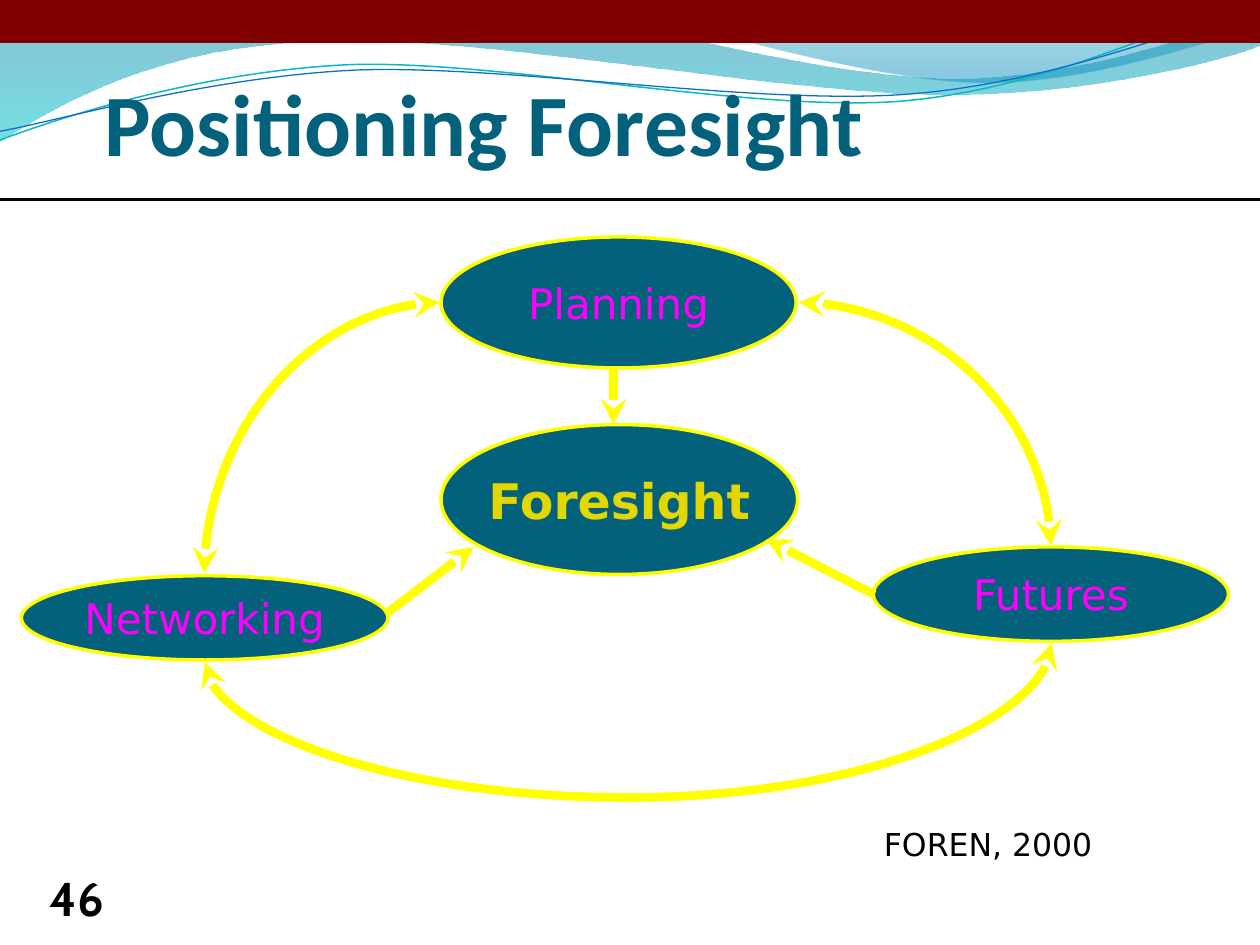
from pptx import Presentation
from pptx import util as u
from pptx.dml.color import RGBColor
from pptx.enum import shapes, text
from pptx.oxml.ns import qn
from lxml import etree

Pt = u.Pt
COLORS = {
    "teal": "04617B", "yellow": "FFFF00", "gold": "E2D700", "magenta": "FF00FF",
    "black": "000000", "maroon": "800000", "aqua": "0AB8BF", "blue": "0F6FC6",
    "ocean": "0074A1", "cyan": "00C6CF", "lagoon": "00A1A9", "sky": "008BBF",
}
WAVES = [
    {"start": (0, 0), "stops": [("ocean", 0, 45), ("cyan", 1, 55)], "segments": [
        [(317, 0)],
        [(343, 12), (478, 45), (546, 45)],
        [(614, 45), (690, 19), (720, 6)],
        [(720, 26)],
        [(708, 32), (626, 55), (537, 54)],
        [(447, 54), (275, 20), (185, 24)],
        [(93, 25), (33, 60), (0, 81)]]},
    {"start": (345, 0), "stops": [("lagoon", 0, 30), ("sky", 0.8, 45)], "segments": [
        [(366, 8), (491, 45), (554, 47)],
        [(616, 50), (692, 23), (720, 15)],
        [(720, 0)]]},
    {"start": (0, 80), "line": ("aqua", 0.85), "segments": [
        [(35, 67), (114, 41), (199, 37)],
        [(284, 34), (427, 64), (513, 58)],
        [(600, 51), (675, 11), (719, -1)]]},
    {"start": (0, 75), "line": ("blue", 0.75), "segments": [
        [(34, 69), (118, 44), (204, 40)],
        [(290, 37), (430, 60), (516, 54)],
        [(602, 48), (678, 15), (720, 4)]]},
]
TOPIC = {"size": 24, "color": "magenta"}
OVALS = [
    ("Planning", (252, 135.4, 203, 74.9), TOPIC),
    ("Futures", (499, 312.5, 203, 54), TOPIC),
    ("Networking", (12.2, 329, 209.5, 48.2), TOPIC),
    ("Foresight", (252, 242.6, 203.8, 85.7), {"size": 28, "color": "gold", "bold": True}),
]
CURVES = [
    {"start": (106.6, 182.9), "end": (261.4, 317.5), "turn": 270, "preset": "curvedConnector2"},
    {"start": (456.5, 172.8), "end": (600.5, 311.8), "turn": 0, "preset": "curvedConnector2"},
    {"start": (364.3, 614.9), "end": (353.5, 131), "turn": 90, "preset": "curvedConnector3",
     "bend": -716700},
]
ARROWS = [
    ((350.6, 210.2), (350.6, 242.6)),
    ((221.8, 349.9), (270.7, 312.5)),
    ((499.7, 339.8), (437.8, 308.2)),
]
RULES = [(113.8, "black", 1.75), (12.2, "maroon", 25)]


def rgb(name):
    return RGBColor.from_string(COLORS[name])


def write(shape, words, size=18, font="DejaVu Sans", color="black", bold=False,
          align="CENTER", anchor="MIDDLE", insets=(7.2, 3.6, 7.2, 3.6), wrap=False):
    frame = shape.text_frame
    frame.word_wrap = wrap
    frame.auto_size = text.MSO_AUTO_SIZE.NONE
    frame.vertical_anchor = getattr(text.MSO_ANCHOR, anchor)
    (frame.margin_left, frame.margin_top,
     frame.margin_right, frame.margin_bottom) = map(Pt, insets)
    paragraph = frame.paragraphs[0]
    paragraph.alignment = getattr(text.PP_ALIGN, align)
    run = paragraph.add_run()
    run.text = words
    run.font.size, run.font.name, run.font.bold = Pt(size), font, bold
    run.font.color.rgb = rgb(color)


def stroke(shape, color, width):
    shape.line.color.rgb = rgb(color)
    shape.line.width = Pt(width)


def add_wave(slide, start, segments, stops=None, line=None):
    points = [(Pt(x), Pt(y)) for segment in segments for x, y in segment]
    builder = slide.shapes.build_freeform(*map(Pt, start))
    builder.add_line_segments(points, close=stops is not None)
    wave = builder.convert_to_shape()
    wave.shadow.inherit = False
    steps = iter(list(wave._element.iter(qn("a:lnTo"))))
    for segment in segments:
        pieces = [next(steps) for _ in segment]
        if len(pieces) == 3:
            curve = etree.Element(qn("a:cubicBezTo"))
            pieces[0].addprevious(curve)
            for piece in pieces:
                curve.append(piece[0])
                piece.getparent().remove(piece)
    if line:
        wave.fill.background()
        stroke(wave, *line)
        return
    wave.line.fill.background()
    wave.fill.gradient()
    wave.fill.gradient_angle = 270
    for stop, (color, position, _) in zip(wave.fill.gradient_stops, stops):
        stop.color.rgb = rgb(color)
        stop.position = position
    for tint, (_, _, opacity) in zip(wave._element.iter(qn("a:srgbClr")), stops):
        etree.SubElement(tint, qn("a:alpha")).set("val", str(opacity * 1000))


def add_line(slide, start, end, color="yellow", width=5, kind="STRAIGHT", ends=()):
    connector = slide.shapes.add_connector(
        getattr(shapes.MSO_CONNECTOR, kind), *map(Pt, start + end))
    stroke(connector, color, width)
    outline = connector.line._get_or_add_ln()
    for end_name in ends:
        etree.SubElement(outline, qn("a:" + end_name)).set("type", "stealth")
    etree.SubElement(connector._element.spPr, qn("a:effectLst"))
    return connector


def add_curve(slide, start, end, turn, preset, bend=None):
    curve = add_line(slide, start, end, kind="CURVE", ends=("headEnd", "tailEnd"))
    properties = curve._element.spPr
    if turn:
        properties.find(qn("a:xfrm")).set("rot", str(turn * 60000))
    geometry = properties.find(qn("a:prstGeom"))
    geometry.set("prst", preset)
    if bend is not None:
        guide = etree.SubElement(geometry.find(qn("a:avLst")), qn("a:gd"))
        guide.set("name", "adj1")
        guide.set("fmla", f"val {bend}")


def main():
    deck = Presentation()
    deck.slide_width, deck.slide_height = Pt(720), Pt(540)
    slide = deck.slides.add_slide(deck.slide_layouts[5])

    for wave in WAVES:
        add_wave(slide, **wave)

    title = slide.shapes.title
    slide.shapes._spTree.append(title._element)
    title.left, title.top, title.width, title.height = map(Pt, (59.8, 31.7, 612, 67.7))
    write(title, "Positioning Foresight", size=50, font="Calibri", color="teal", bold=True,
          align="LEFT", anchor="BOTTOM", insets=(0, 3.6, 0, 0), wrap=True)

    for words, place, style in OVALS:
        oval = slide.shapes.add_shape(shapes.MSO_SHAPE.OVAL, *map(Pt, place))
        oval.shadow.inherit = False
        oval.fill.solid()
        oval.fill.fore_color.rgb = rgb("teal")
        stroke(oval, "yellow", 2)
        write(oval, words, **style)

    for curve in CURVES:
        add_curve(slide, **curve)
    for start, end in ARROWS:
        add_line(slide, start, end, ends=("tailEnd",))

    credit = slide.shapes.add_textbox(*map(Pt, (491.8, 455.8, 145.4, 41)))
    write(credit, "FOREN, 2000", align="RIGHT", anchor="BOTTOM", insets=(7.2, 3.6, 13, 3.6))

    for y, color, width in RULES:
        add_line(slide, (0, y), (720, y), color=color, width=width)

    number = slide.shapes.add_textbox(*map(Pt, (10, 493.2, 67.7, 39.6)))
    write(number, "46", size=27, font="Cabin", bold=True, wrap=True)

    deck.save("out.pptx")


if __name__ == "__main__":
    main()
